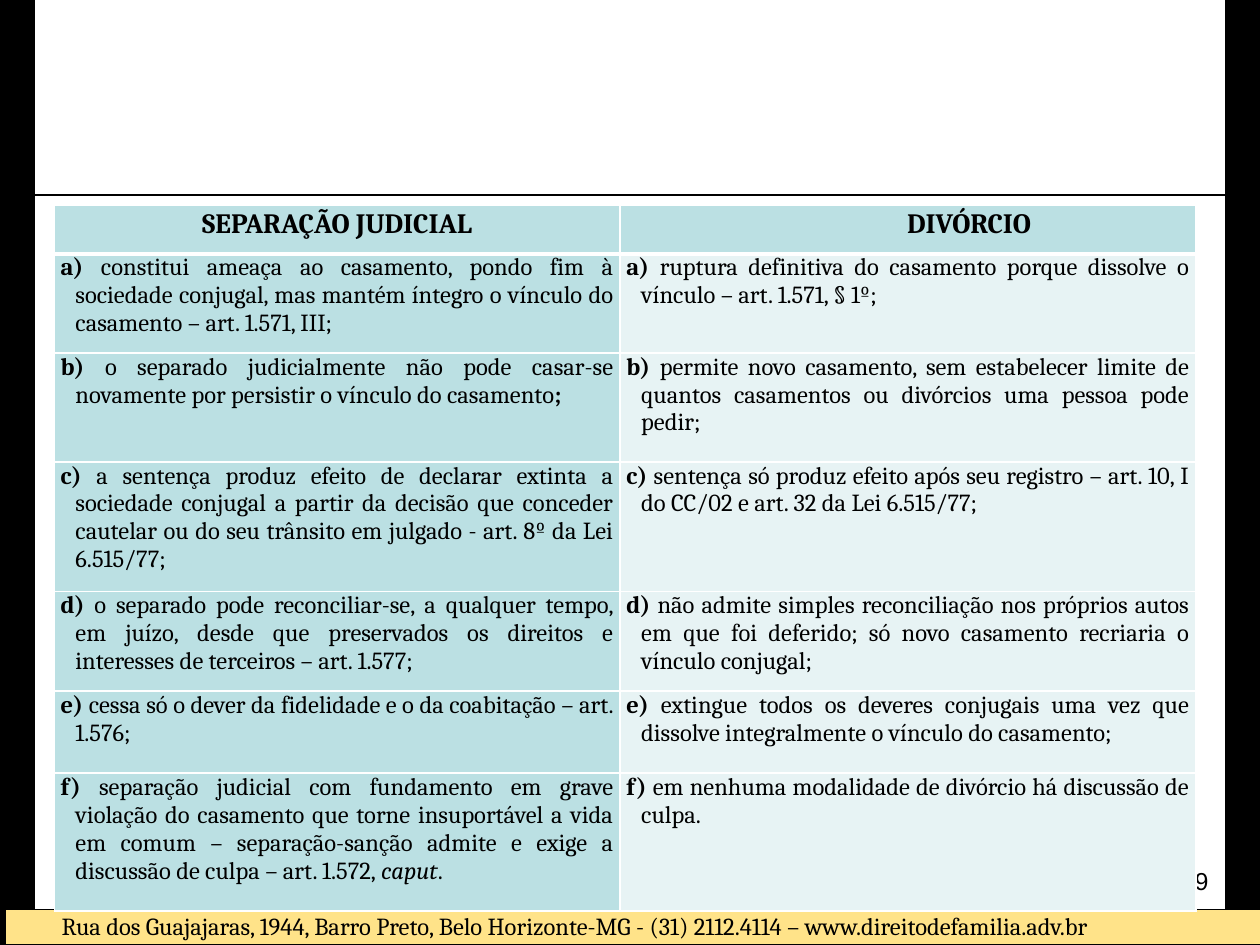
from lxml import etree
from pptx import Presentation
from pptx.dml.color import RGBColor
from pptx.enum import shapes, text
from pptx.oxml import ns
from pptx.util import Pt

BLACK = RGBColor(0, 0, 0)
WHITE = RGBColor(255, 255, 255)
GOLD = RGBColor(0xFF, 0xE3, 0x89)
TEAL = RGBColor(0xBB, 0xE0, 0xE3)
PALE = RGBColor(0xE7, 0xF3, 0xF4)
ALIGN = text.PP_ALIGN


def add_run(para, words, size, face="Cambria", style=""):
    run = para.add_run()
    run.text = words
    font = run.font
    font.size, font.name = Pt(size), face
    font.bold, font.italic = style == "b", style == "i"
    font.color.rgb = BLACK


def add_edge(cell, side, width):
    props = cell._tc.get_or_add_tcPr()
    edge = etree.SubElement(props, ns.qn("a:ln" + side), w=str(Pt(width)))
    fill = etree.SubElement(edge, ns.qn("a:solidFill"))
    etree.SubElement(fill, ns.qn("a:srgbClr"), val=str(WHITE))


deck = Presentation()
deck.slide_width, deck.slide_height = Pt(720), Pt(540)
slide = deck.slides.add_slide(deck.slide_layouts[6])

# Side bars and footer band
for x, y, w, h, color in [
    (0, 0, 19.44, 540, BLACK),
    (700.56, 0, 19.44, 540, BLACK),
    (2.88, 519.84, 720, 20.16, GOLD),
]:
    bar = slide.shapes.add_shape(
        shapes.MSO_SHAPE.RECTANGLE, Pt(x), Pt(y), Pt(w), Pt(h))
    bar.shadow.inherit = False
    bar.fill.solid()
    bar.fill.fore_color.rgb = color
    bar.line.color.rgb = BLACK
    bar.line.width = Pt(0.75)

# Rule under the title area
rule = slide.shapes.add_connector(
    shapes.MSO_CONNECTOR.STRAIGHT, Pt(19.44), Pt(111.4), Pt(705.6), Pt(111.4))
rule.line.color.rgb = BLACK
rule.line.width = Pt(0.75)
etree.SubElement(rule._element.spPr, ns.qn("a:effectLst"))

# Address and page number
for x, y, w, h, words, face, align in [
    (28.08, 516.96, 689, 24.5,
     "Rua dos Guajajaras, 1944, Barro Preto, Belo Horizonte-MG - "
     "(31) 2112.4114 – www.direitodefamilia.adv.br", "Cambria", ALIGN.LEFT),
    (529.92, 491.04, 167.76, 37.44, "9", "Arial", ALIGN.RIGHT),
]:
    frame = slide.shapes.add_textbox(Pt(x), Pt(y), Pt(w), Pt(h)).text_frame
    frame.word_wrap = True
    para = frame.paragraphs[0]
    para.alignment = align
    add_run(para, words, 14, face)

# Comparison: each cell holds its runs as (words, style)
pairs = [
    ([("constitui ameaça ao casamento, pondo fim à sociedade conjugal, mas "
       "mantém íntegro o vínculo do casamento – art. 1.571, III;", "")],
     [("ruptura definitiva do casamento porque dissolve o vínculo – "
       "art. 1.571, § 1º;", "")]),
    ([("o separado judicialmente não pode casar-se novamente por persistir "
       "o vínculo do casamento", ""), (";", "b")],
     [("permite novo casamento, sem estabelecer limite de quantos casamentos "
       "ou divórcios uma pessoa pode pedir;", "")]),
    ([("a sentença produz efeito de declarar extinta a sociedade conjugal a "
       "partir da decisão que conceder cautelar ou do seu trânsito em julgado "
       "- art. 8º da Lei 6.515/77;", "")],
     [("sentença só produz efeito após seu registro – art. 10, I do CC/02 e "
       "art. 32 da Lei 6.515/77;", "")]),
    ([("o separado pode reconciliar-se, a qualquer tempo, em juízo, desde que "
       "preservados os direitos e interesses de terceiros – art. 1.577;", "")],
     [("não admite simples reconciliação nos próprios autos em que foi "
       "deferido; só novo casamento recriaria o vínculo conjugal;", "")]),
    ([("cessa só o dever da fidelidade e o da coabitação – art. 1.576;", "")],
     [("extingue todos os deveres conjugais uma vez que dissolve "
       "integralmente o vínculo do casamento;", "")]),
    ([("separação judicial com fundamento em grave violação do casamento que "
       "torne insuportável a vida em comum – separação-sanção admite e exige "
       "a discussão de culpa – art. 1.572, ", ""), ("caput", "i"), (".", "")],
     [("em nenhuma modalidade de divórcio há discussão de culpa.", "")]),
]
heads = ([("SEPARAÇÃO JUDICIAL", "b")], [("DIVÓRCIO", "b")])
rows = [heads] + [
    [[(mark + ") ", "b")] + runs for runs in pair]
    for mark, pair in zip("abcdef", pairs)]

# Table grid
widths = [323.3, 329]
heights = [28.1, 56.7, 62.3, 73.9, 57, 46.9, 78.7]
table = slide.shapes.add_table(
    len(rows), 2, Pt(31), Pt(117), Pt(sum(widths)), Pt(sum(heights))).table
for col, width in zip(table.columns, widths):
    col.width = Pt(width)
for row, height in zip(table.rows, heights):
    row.height = Pt(height)

# Table cells
for r, row in enumerate(rows):
    for c, runs in enumerate(row):
        head = r == 0
        cell = table.cell(r, c)
        cell.margin_left = cell.margin_right = Pt(3.6)
        cell.margin_top = cell.margin_bottom = 0
        for side in "LRTB":
            thick = (head and side == "B") or (r == 1 and side == "T")
            add_edge(cell, side, 3 if thick else 1)
        cell.fill.solid()
        cell.fill.fore_color.rgb = TEAL if head or c == 0 else PALE
        para = cell.text_frame.paragraphs[0]
        para.space_after = Pt(3)
        para.line_spacing = Pt(13 if head else 16)
        props = para._p.get_or_add_pPr()
        if head:
            cell.vertical_anchor = text.MSO_ANCHOR.MIDDLE
            para.alignment = ALIGN.CENTER
            props.set("marL", str(Pt(70 * c)))
        else:
            para.alignment = ALIGN.JUSTIFY
            props.set("marL", str(Pt(8.5)))
            props.set("indent", str(Pt(-8.5)))
        for words, style in runs:
            add_run(para, words, 16 if head else 14, style=style)

deck.save("out.pptx")
